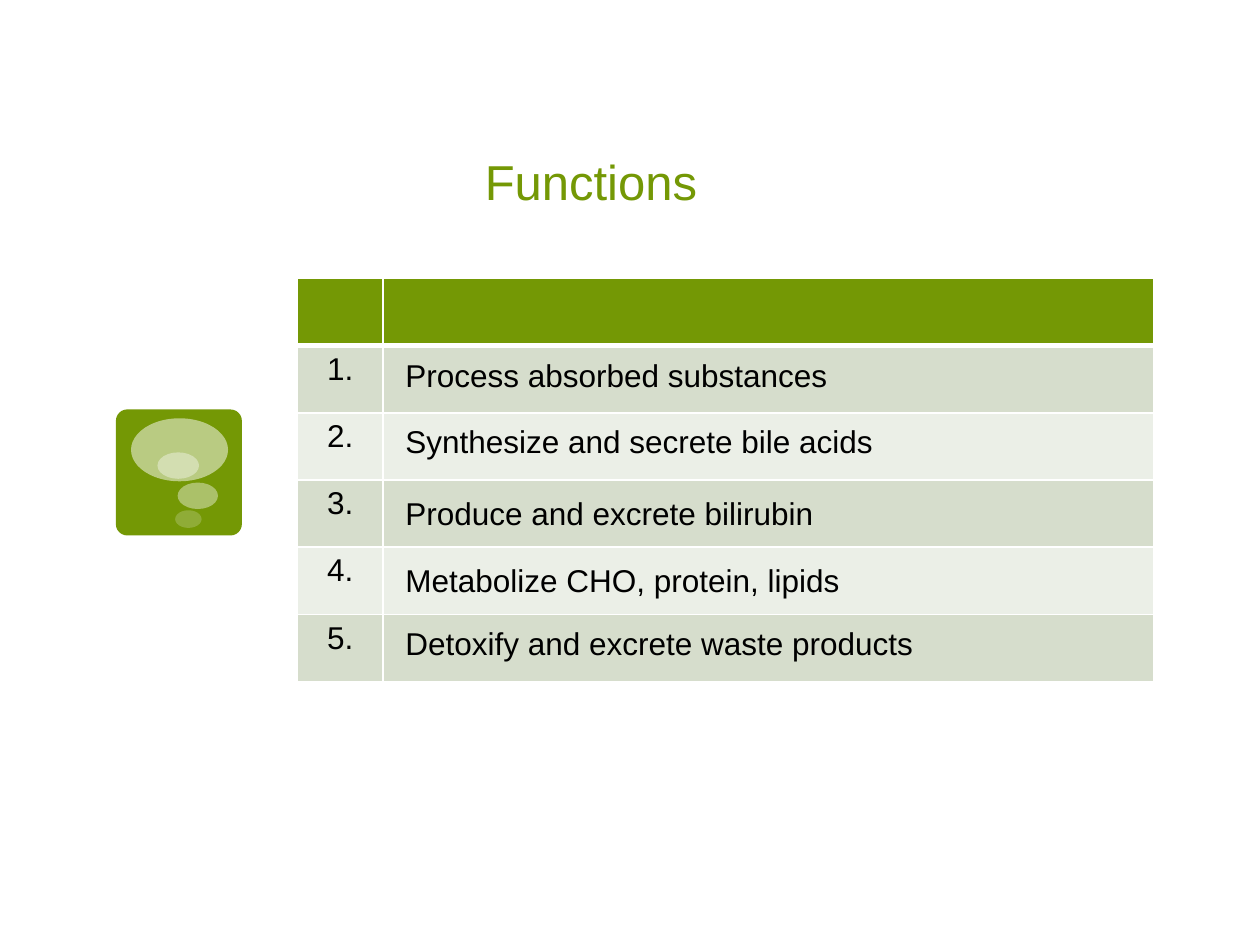
"""Build the slide that lists five functions in a numbered table."""
from lxml.etree import SubElement
from pptx import Presentation
from pptx.dml.color import RGBColor
from pptx.enum.shapes import MSO_SHAPE
from pptx.enum.text import MSO_ANCHOR, MSO_AUTO_SIZE, PP_ALIGN
from pptx.oxml.ns import qn
from pptx.util import Inches, Pt

GREEN = RGBColor(0x74, 0x98, 0x05)
DARK_BAND = RGBColor(0xD6, 0xDD, 0xCC)
LIGHT_BAND = RGBColor(0xEB, 0xEF, 0xE7)
WHITE = RGBColor(0xFF, 0xFF, 0xFF)
BLACK = RGBColor(0x00, 0x00, 0x00)


def style_text(paragraph, text, size, color):
    paragraph.text = text
    paragraph.font.name = "Arial"
    paragraph.font.size = Pt(size)
    paragraph.font.color.rgb = color


def add_badge_part(preset, box, color):
    part = slide.shapes.add_shape(preset, *(Inches(length) for length in box))
    part.shadow.inherit = False
    part.fill.solid()
    part.fill.fore_color.rgb = color
    part.line.fill.background()
    return part


presentation = Presentation()
presentation.slide_width = Inches(10)
presentation.slide_height = Inches(7.5)
slide = presentation.slides.add_slide(presentation.slide_layouts[6])

badge = add_badge_part(MSO_SHAPE.ROUNDED_RECTANGLE, (0.92, 3.25, 1, 1), GREEN)
badge.adjustments[0] = 0.09

bubbles = [
    ((1.04, 3.32, 0.77, 0.5), 50),
    ((1.41, 3.83, 0.32, 0.21), 40),
    ((1.39, 4.05, 0.21, 0.14), 20),
    ((1.25, 3.59, 0.33, 0.21), 38),
]
for box, opacity in bubbles:
    bubble = add_badge_part(MSO_SHAPE.OVAL, box, WHITE)
    bubble_color = bubble._element.spPr.find(qn("a:solidFill"))[0]
    SubElement(bubble_color, qn("a:alpha"), val=str(opacity * 1000))

title = slide.shapes.add_textbox(Inches(3.75), Inches(0.75), Inches(5.41), Inches(0.97))
title.text_frame.word_wrap = True
title.text_frame.vertical_anchor = MSO_ANCHOR.BOTTOM
style_text(title.text_frame.paragraphs[0], "Functions", 28, GREEN)

functions = [
    ("Process absorbed substances", 2.78),
    ("Synthesize and secrete bile acids", 3.3),
    ("Produce and excrete bilirubin", 3.87),
    ("Metabolize CHO, protein, lipids", 4.4),
    ("Detoxify and excrete waste products", 4.9),
]

table = slide.shapes.add_table(
    len(functions) + 1, 2, Inches(2.36), Inches(2.21), Inches(6.8), Inches(3.2)
).table
table.columns[0].width = Inches(0.68)
table.columns[1].width = Inches(6.12)

for row_number, row in enumerate(table.rows):
    for cell in row.cells:
        properties = cell._tc.get_or_add_tcPr()
        for side in ("L", "R", "T", "B"):
            header_edge = (row_number, side) in ((0, "B"), (1, "T"))
            border = SubElement(
                properties, qn(f"a:ln{side}"), w=str(Pt(3 if header_edge else 1))
            )
            border_fill = SubElement(border, qn("a:solidFill"))
            SubElement(border_fill, qn("a:srgbClr"), val=str(WHITE))
        cell.fill.solid()
        if row_number == 0:
            cell.fill.fore_color.rgb = GREEN
        else:
            cell.fill.fore_color.rgb = DARK_BAND if row_number % 2 else LIGHT_BAND
    if row_number:
        number = row.cells[0].text_frame.paragraphs[0]
        style_text(number, f"{row_number}.", 18, BLACK)
        number.alignment = PP_ALIGN.CENTER

for function, top in functions:
    label = slide.shapes.add_textbox(Inches(3.12), Inches(top), Inches(5.86), Inches(0.4))
    label.text_frame.word_wrap = True
    label.text_frame.auto_size = MSO_AUTO_SIZE.SHAPE_TO_FIT_TEXT
    style_text(label.text_frame.paragraphs[0], function, 18, BLACK)

presentation.save("out.pptx")
